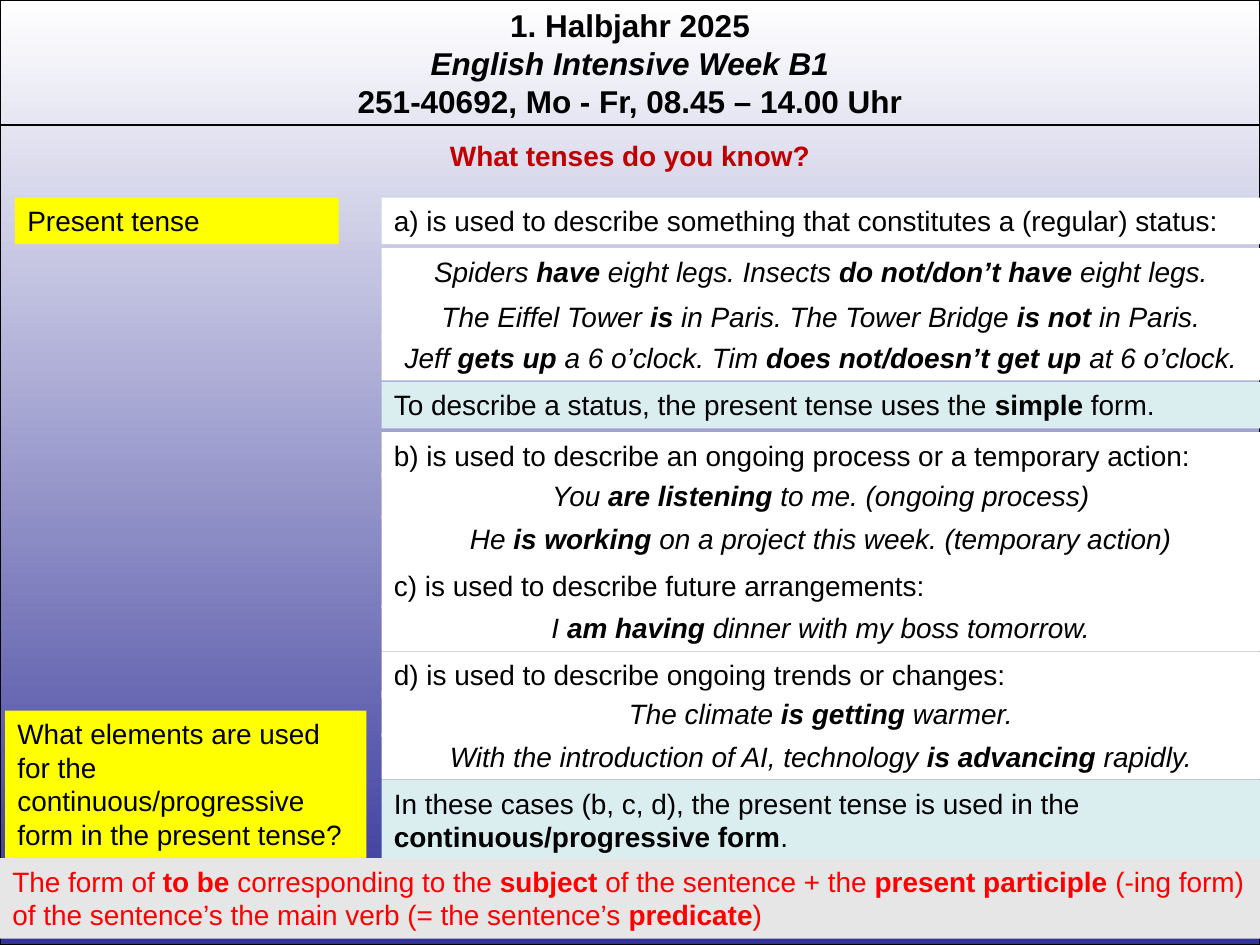
import pptx
import pptx.dml.color
import pptx.enum.shapes
import pptx.enum.text
import pptx.oxml
import pptx.util

Pt = pptx.util.Pt
ALIGN = pptx.enum.text.PP_ALIGN

WIDTH, HEIGHT = 720, 540
RULES_LEFT, RULES_WIDTH, ROW_HEIGHT = 218, 502, 26.6
COLORS = {
    "black": "000000", "white": "FFFFFF", "indigo": "333399", "crimson": "C00000",
    "red": "FF0000", "yellow": "FFFF00", "mint": "DAEDEF", "gray": "E6E6E6",
}

# (top, kind, text); ** switches bold on and off
RULES = [
    (113, "rule", "a) is used to describe something that constitutes a (regular) status:"),
    (141.8, "example", "Spiders **have** eight legs. Insects **do not/don’t have **eight legs."),
    (167.8, "example", "The Eiffel Tower **is** in Paris. The Tower Bridge **is not **in Paris."),
    (190.8, "example", "Jeff **gets up **a 6 o’clock. Tim **does not/doesn’t get up **at 6 o’clock."),
    (218.2, "summary", "To describe a status, the present tense uses the **simple** form."),
    (247, "rule", "b) is used to describe an ongoing process or a temporary action:"),
    (270, "example", "You **are listening **to me. (ongoing process)"),
    (294.5, "example", "He **is working **on a project this week. (temporary action)"),
    (321.1, "rule", "c) is used to describe future arrangements:"),
    (345.6, "example", "I **am having **dinner with my boss tomorrow."),
    (372.2, "rule", "d) is used to describe ongoing trends or changes:"),
    (394.6, "example", "The climate **is getting **warmer."),
    (419, "example", "With the introduction of AI, technology **is advancing **rapidly."),
    (445.7, "summary", "In these cases (b, c, d), the present tense is used in the "
                       "**continuous/progressive form**."),
]


def rgb(name):
    return pptx.dml.color.RGBColor.from_string(COLORS[name])


def write(paragraph, text, size=16, color="black", bold=False, italic=False, align=ALIGN.LEFT):
    """Fill a paragraph; parts between ** marks are bold."""
    paragraph.alignment = align
    for index, part in enumerate(text.split("**")):
        if part:
            run = paragraph.add_run()
            run.text = part
            font = run.font
            font.name, font.size = "Arial", Pt(size)
            font.bold, font.italic = bold or index % 2 == 1, italic
            font.color.rgb = rgb(color)


def fit_frame(frame):
    frame.word_wrap = True
    frame.vertical_anchor = pptx.enum.text.MSO_ANCHOR.TOP
    frame.auto_size = pptx.enum.text.MSO_AUTO_SIZE.SHAPE_TO_FIT_TEXT


def add_rectangle(slide, left, top, width, height):
    rectangle = slide.shapes.add_shape(
        pptx.enum.shapes.MSO_SHAPE.RECTANGLE, Pt(left), Pt(top), Pt(width), Pt(height))
    rectangle.shadow.inherit = False
    return rectangle


def add_panel(slide, left, top, width, height, fill, text, **text_format):
    panel = add_rectangle(slide, left, top, width, height)
    panel.fill.solid()
    panel.fill.fore_color.rgb = rgb(fill)
    panel.line.fill.background()
    fit_frame(panel.text_frame)
    write(panel.text_frame.paragraphs[0], text, **text_format)


def add_backdrop(slide):
    backdrop = add_rectangle(slide, 0, 0, WIDTH, HEIGHT)
    backdrop.fill.gradient()
    backdrop.fill.gradient_angle = 270
    for stop, position, color in zip(backdrop.fill.gradient_stops, (0, 1), ("white", "indigo")):
        stop.position = position
        stop.color.rgb = rgb(color)
    backdrop.line.color.rgb = rgb("black")
    backdrop.line.width = Pt(0.75)
    # Behind the title placeholder
    slide.shapes._spTree.insert(2, backdrop._element)


def add_course_title(slide):
    title = slide.shapes.title
    title.left, title.top, title.width, title.height = Pt(0), Pt(0), Pt(WIDTH), Pt(72.7)
    frame = title.text_frame
    fit_frame(frame)
    lines = ["1. Halbjahr 2025", "English Intensive Week B1",
             "251-40692, Mo - Fr, 08.45 – 14.00 Uhr"]
    for index, line in enumerate(lines):
        paragraph = frame.add_paragraph() if index else frame.paragraphs[0]
        write(paragraph, line, size=18, bold=True, italic=index == 1, align=ALIGN.CENTER)


def add_divider(slide, top):
    divider = slide.shapes.add_connector(
        pptx.enum.shapes.MSO_CONNECTOR.STRAIGHT, Pt(0), Pt(top), Pt(WIDTH), Pt(top))
    divider.line.color.rgb = rgb("black")
    divider.line.width = Pt(0.75)
    divider._element.spPr.append(pptx.oxml.parse_xml(
        '<a:effectLst xmlns:a="http://schemas.openxmlformats.org/drawingml/2006/main"/>'))


def add_question(slide):
    question = slide.shapes.add_textbox(Pt(0), Pt(75.6), Pt(WIDTH), Pt(ROW_HEIGHT))
    fit_frame(question.text_frame)
    write(question.text_frame.paragraphs[0], "What tenses do you know?",
          color="crimson", bold=True, align=ALIGN.CENTER)


def add_rules(slide):
    for top, kind, text in RULES:
        example = kind == "example"
        last = top == RULES[-1][0]
        add_panel(slide, RULES_LEFT, top, RULES_WIDTH, 46 if last else ROW_HEIGHT,
                  "mint" if kind == "summary" else "white", text,
                  italic=example, align=ALIGN.CENTER if example else ALIGN.LEFT)


def main():
    presentation = pptx.Presentation()
    presentation.slide_width, presentation.slide_height = Pt(WIDTH), Pt(HEIGHT)
    slide = presentation.slides.add_slide(presentation.slide_layouts[5])

    add_backdrop(slide)
    add_course_title(slide)
    add_divider(slide, 71.5)
    add_question(slide)
    add_panel(slide, 8.6, 113, 185, ROW_HEIGHT, "yellow", "Present tense")
    add_rules(slide)
    add_panel(slide, 2.9, 406, 206.6, 85, "yellow",
              "What elements are used for the continuous/progressive form in the present tense?")
    add_panel(slide, 0, 490.3, 723, 46, "gray",
              "The form of **to be **corresponding to the **subject** of the sentence + the "
              "**present participle **(-ing form) of the sentence’s the main verb "
              "(= the sentence’s **predicate**)", color="red")

    presentation.save("out.pptx")


if __name__ == "__main__":
    main()
